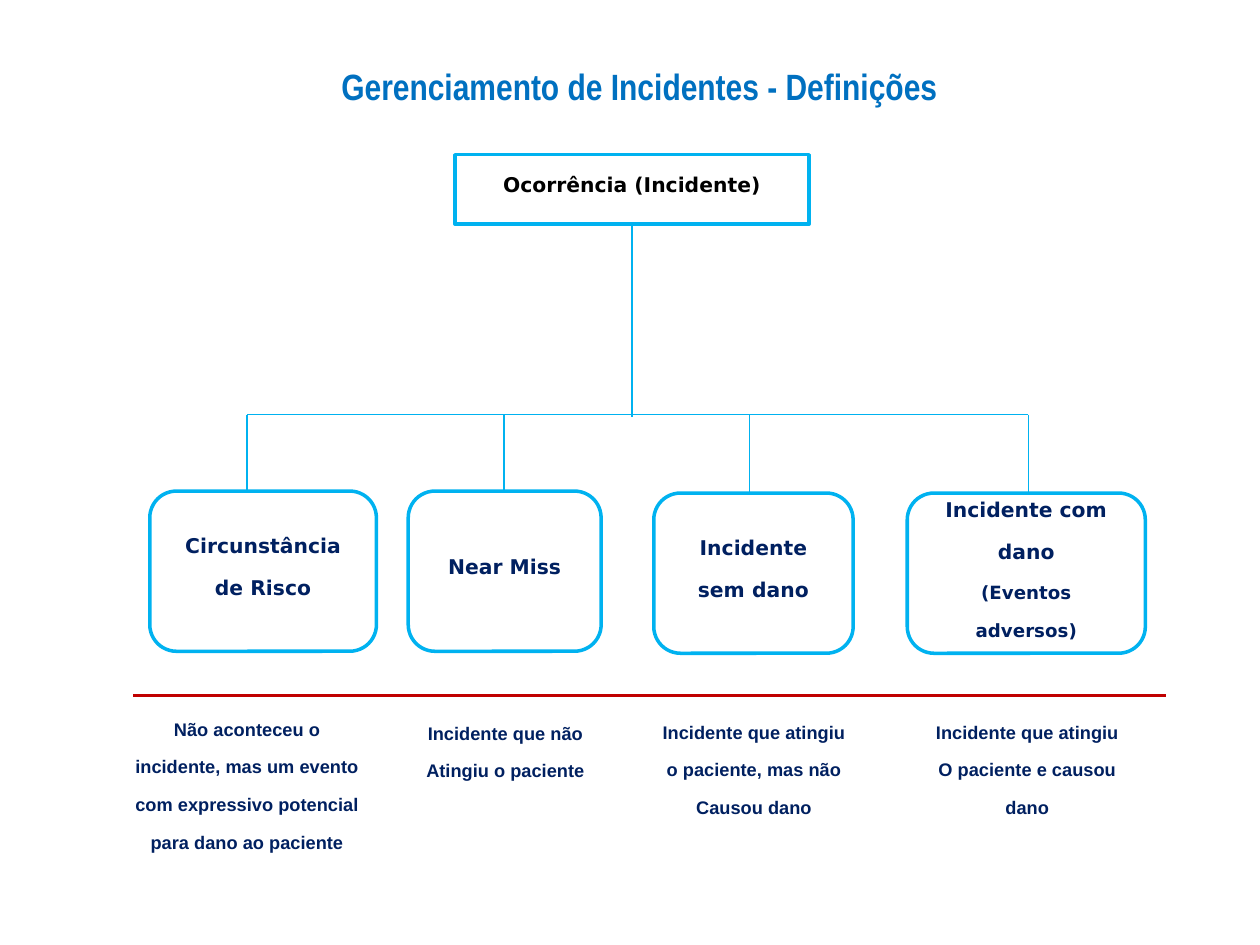
from lxml import etree
from pptx import Presentation
from pptx.dml.color import RGBColor
from pptx.enum.shapes import MSO_CONNECTOR, MSO_SHAPE
from pptx.enum.text import MSO_ANCHOR, MSO_AUTO_SIZE, PP_ALIGN
from pptx.oxml.ns import qn
from pptx.util import Cm, Pt

STRAIGHT = MSO_CONNECTOR.STRAIGHT
RECTANGLE, ROUNDED = MSO_SHAPE.RECTANGLE, MSO_SHAPE.ROUNDED_RECTANGLE
MIDDLE, CENTER = MSO_ANCHOR.MIDDLE, PP_ALIGN.CENTER
GROW = MSO_AUTO_SIZE.SHAPE_TO_FIT_TEXT

COLORS = {
    "white": "FFFFFF",
    "black": "000000",
    "cyan": "00B2F0",
    "navy": "002060",
    "red": "C00000",
    "blue": "0070C0",
}
TITLE_FONT = {"name": "Arial Narrow", "size": Pt(36), "bold": True}
BOX_FONT = {"name": "DejaVu Sans", "size": Pt(20), "bold": True}
NOTE_FONT = {"name": "Arial", "size": Pt(18), "bold": True}

CATEGORIES = [
    {
        "box": (3.02, 9.9, 4.57), "stem": 4.98,
        "name": [("Circunstância de Risco", 20)],
        "note_box": (2.11, 14.27, 5.74, 2.31),
        "note": ["Não aconteceu o", "incidente, mas um evento",
                 "com expressivo potencial", "para dano ao paciente"],
    },
    {
        "box": (8.23, 9.9, 3.89), "stem": 10.16,
        "name": [("Near Miss", 20)],
        "note_box": (8.08, 14.35, 4.22, 1.27),
        "note": ["Incidente que não", "Atingiu o paciente"],
    },
    {
        "box": (13.18, 9.94, 4.02), "stem": 15.11,
        "name": [("Incidente sem dano", 20)],
        "note_box": (12.8, 14.33, 4.8, 1.8),
        "note": ["Incidente que atingiu", "o paciente, mas não", "Causou dano"],
    },
    {
        "box": (18.29, 9.94, 4.8), "stem": 20.73,
        "name": [("Incidente com dano", 20), ("(Eventos adversos)", 18)],
        "note_box": (18.31, 14.33, 4.8, 1.8),
        "note": ["Incidente que atingiu", "O paciente e causou", "dano"],
    },
]
CATEGORY_HEIGHT = 3.23
BRANCH_Y = 8.36


def rgb(color):
    return RGBColor.from_string(COLORS[color])


def write(shape, lines, font, color):
    frame = shape.text_frame
    for index, (text, size) in enumerate(lines):
        paragraph = frame.paragraphs[0] if index == 0 else frame.add_paragraph()
        paragraph.alignment = CENTER
        run = paragraph.add_run()
        run.text = text
        for attribute, value in {**font, "size": Pt(size)}.items():
            setattr(run.font, attribute, value)
        run.font.color.rgb = rgb(color)
    for properties in shape.element.iter(qn("a:rPr")):
        properties.set("baseline", "30000")


def add_rule(slide, start, end, color="cyan", width=0.75):
    rule = slide.shapes.add_connector(STRAIGHT, *map(Cm, start + end))
    rule.line.color.rgb = rgb(color)
    rule.line.width = Pt(width)
    etree.SubElement(rule.element.spPr, qn("a:effectLst"))


def add_node(slide, box, outline, lines, color):
    node = slide.shapes.add_shape(outline, *map(Cm, box))
    node.shadow.inherit = False
    node.fill.solid()
    node.fill.fore_color.rgb = rgb("white")
    node.line.color.rgb = rgb("cyan")
    node.line.width = Pt(2)
    node.text_frame.word_wrap = True
    node.text_frame.vertical_anchor = MIDDLE
    write(node, lines, BOX_FONT, color)


def add_title(slide, box):
    title = slide.shapes.add_textbox(*map(Cm, box))
    title.text_frame.word_wrap = True
    write(title, [("Gerenciamento de Incidentes - Definições", 36)], TITLE_FONT, "blue")


def add_occurrence(slide, box):
    left, top, width, height = box
    add_node(slide, box, RECTANGLE, [("Ocorrência (Incidente)", 20)], "black")
    middle = left + width / 2
    add_rule(slide, (middle, top + height), (middle, BRANCH_Y + 0.05))


def add_category(slide, box, category):
    stem = category["stem"]
    add_rule(slide, (stem, BRANCH_Y), (stem, box[1]))
    add_node(slide, box, ROUNDED, category["name"], "navy")


def add_note(slide, box, lines):
    note = slide.shapes.add_textbox(*map(Cm, box))
    note.text_frame.word_wrap = False
    note.text_frame.auto_size = GROW
    write(note, [(line, 18) for line in lines], NOTE_FONT, "navy")


def main():
    presentation = Presentation()
    presentation.slide_width, presentation.slide_height = Cm(25.4), Cm(19.05)
    slide = presentation.slides.add_slide(presentation.slide_layouts[6])

    add_title(slide, (0.71, 1.02, 24.36, 1.78))
    add_occurrence(slide, (9.17, 3.12, 7.14, 1.4))
    add_rule(slide, (CATEGORIES[0]["stem"], BRANCH_Y), (CATEGORIES[-1]["stem"], BRANCH_Y))
    for category in CATEGORIES:
        add_category(slide, (*category["box"], CATEGORY_HEIGHT), category)
        add_note(slide, category["note_box"], category["note"])
    add_rule(slide, (2.69, 14.02), (23.5, 14.02), "red", 1.5)

    presentation.save("out.pptx")


if __name__ == "__main__":
    main()
